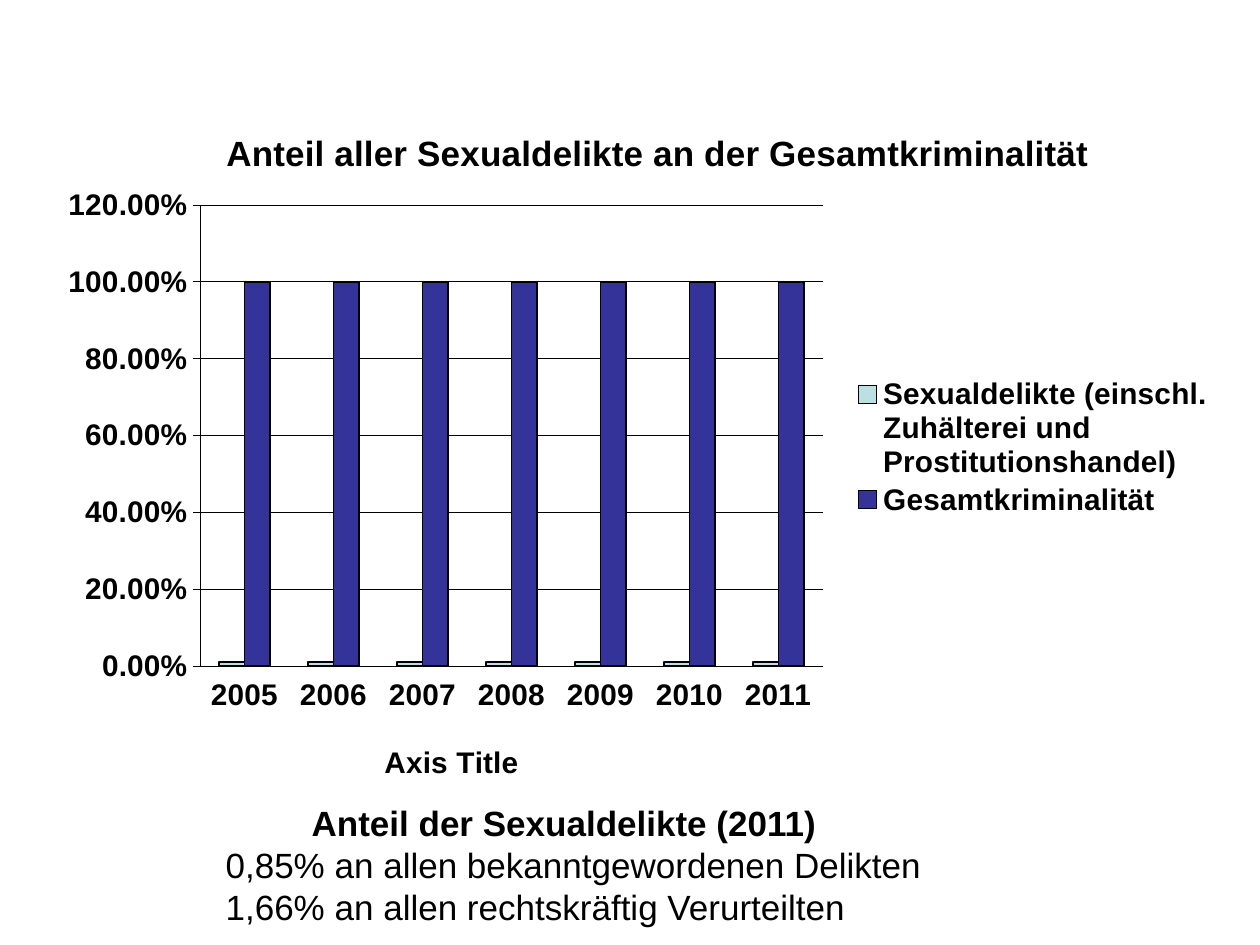
from pptx import Presentation
from pptx.chart.data import CategoryChartData
from pptx.dml.color import RGBColor
from pptx.enum.chart import XL_CHART_TYPE, XL_LEGEND_POSITION, XL_TICK_LABEL_POSITION, XL_TICK_MARK
from pptx.enum.text import MSO_ANCHOR, MSO_AUTO_SIZE, PP_ALIGN
from pptx.oxml.ns import qn
from pptx.oxml.xmlchemy import OxmlElement
from pptx.util import Emu, Pt

# Content
CHART_TITLE = "Anteil aller Sexualdelikte an der Gesamtkriminalität"
AXIS_TITLE = "Axis Title"
YEARS = [str(year) for year in range(2005, 2012)]
SERIES = [
    ("Sexualdelikte (einschl. Zuhälterei und Prostitutionshandel)", [0.01] * 7),
    ("Gesamtkriminalität", [1] * 7),
]
SUMMARY = [
    "Anteil der Sexualdelikte (2011)",
    "0,85% an allen bekanntgewordenen Delikten",
    "1,66% an allen rechtskräftig Verurteilten",
]

# Theme and places (px: left, top, width, height)
THEME = {
    "font": "Arial",
    "ink": RGBColor(0, 0, 0),
    "bars": [RGBColor(0xBB, 0xE0, 0xE3), RGBColor(0x33, 0x33, 0x99)],
    "title_size": Pt(20),
    "label_size": Pt(17),
    "thin": Pt(0.25),
    "outline": Pt(1),
}
SLIDE_SIZE = (1260, 945)
CHART_BOX = (44, 92, 1181, 707)
PLOT_BOX = (200, 205, 623, 461)
LEGEND_BOX = (850, 374, 366, 146)
CHART_TITLE_AT = (220, 124)
AXIS_TITLE_AT = (379, 737)
SUMMARY_BOX = (213, 820, 764, 90)
SUMMARY_INDENT = 86


def px(value):
    return Emu(value * 914400 // 126)


def style_font(font, size, bold=True):
    font.name = THEME["font"]
    font.size = size
    font.bold = bold
    font.color.rgb = THEME["ink"]


def style_line(line, width):
    line.color.rgb = THEME["ink"]
    line.width = width


def place(element, box, inner=False):
    """Give a chart part a fixed place, from slide px to chart fractions."""
    for old in element.findall(qn("c:layout")):
        element.remove(old)
    layout = OxmlElement("c:layout")
    manual = OxmlElement("c:manualLayout")
    layout.append(manual)
    left, top, width, height = CHART_BOX
    fractions = [(box[0] - left) / width, (box[1] - top) / height]
    fractions += [length / whole for length, whole in zip(box[2:], (width, height))]
    settings = [("layoutTarget", "inner")] if inner else []
    settings += [("xMode", "edge"), ("yMode", "edge")]
    settings += [(name, f"{value:.4f}") for name, value in zip("xywh", fractions)]
    for name, value in settings:
        setting = OxmlElement(f"c:{name}")
        setting.set("val", value)
        manual.append(setting)
    overlay = element.find(qn("c:overlay"))
    if overlay is None:
        element.insert(0, layout)
    else:
        overlay.addprevious(layout)


def set_title(title, text, size, position):
    title.text_frame.text = text
    style_font(title.text_frame.paragraphs[0].runs[0].font, size)
    place(title._element, position)


def add_crime_chart(slide):
    data = CategoryChartData(number_format="0.00%")
    data.categories = YEARS
    for name, values in SERIES:
        data.add_series(name, values)
    chart = slide.shapes.add_chart(
        XL_CHART_TYPE.COLUMN_CLUSTERED, *map(px, CHART_BOX), data).chart
    style_font(chart.font, THEME["label_size"])
    chart.has_title = True
    set_title(chart.chart_title, CHART_TITLE, THEME["title_size"], CHART_TITLE_AT)

    # Bars
    plot = chart.plots[0]
    plot.gap_width = 150
    plot.overlap = 0
    plot.vary_by_categories = False
    for series, color in zip(plot.series, THEME["bars"]):
        series.format.fill.solid()
        series.format.fill.fore_color.rgb = color
        style_line(series.format.line, THEME["outline"])

    # Axes
    years, shares = chart.category_axis, chart.value_axis
    for axis in (years, shares):
        style_font(axis.tick_labels.font, THEME["label_size"])
        style_line(axis.format.line, THEME["thin"])
        axis.minor_tick_mark = XL_TICK_MARK.NONE
    years.major_tick_mark = XL_TICK_MARK.NONE
    years.tick_label_position = XL_TICK_LABEL_POSITION.LOW
    years.has_title = True
    set_title(years.axis_title, AXIS_TITLE, THEME["label_size"], AXIS_TITLE_AT)
    shares.minimum_scale, shares.maximum_scale, shares.major_unit = 0, 1.2, 0.2
    shares.major_tick_mark = XL_TICK_MARK.OUTSIDE
    shares.has_major_gridlines = True
    style_line(shares.major_gridlines.format.line, THEME["thin"])
    shares.tick_labels.number_format = "0.00%"
    shares.tick_labels.number_format_is_linked = False

    # Legend and plot area
    chart.has_legend = True
    chart.legend.position = XL_LEGEND_POSITION.RIGHT
    chart.legend.include_in_layout = False
    style_font(chart.legend.font, THEME["label_size"])
    place(chart.legend._element, LEGEND_BOX)
    place(chart._chartSpace.chart.plotArea, PLOT_BOX, inner=True)


def add_summary(slide):
    title = slide.shapes.title
    title.left, title.top, title.width, title.height = map(px, SUMMARY_BOX)
    frame = title.text_frame
    frame.word_wrap = True
    frame.auto_size = MSO_AUTO_SIZE.NONE
    frame.vertical_anchor = MSO_ANCHOR.MIDDLE
    frame.text = "\v".join(SUMMARY)
    paragraph = frame.paragraphs[0]
    paragraph.alignment = PP_ALIGN.LEFT
    # Only the first line is indented
    properties = paragraph._p.get_or_add_pPr()
    properties.set("marL", "0")
    properties.set("indent", str(px(SUMMARY_INDENT)))
    for index, run in enumerate(paragraph.runs):
        style_font(run.font, THEME["title_size"], bold=index == 0)


def main():
    presentation = Presentation()
    presentation.slide_width, presentation.slide_height = map(px, SLIDE_SIZE)
    slide = presentation.slides.add_slide(presentation.slide_layouts[0])
    subtitle = slide.placeholders[1]._element
    subtitle.getparent().remove(subtitle)
    add_summary(slide)
    add_crime_chart(slide)
    presentation.save("out.pptx")


if __name__ == "__main__":
    main()
